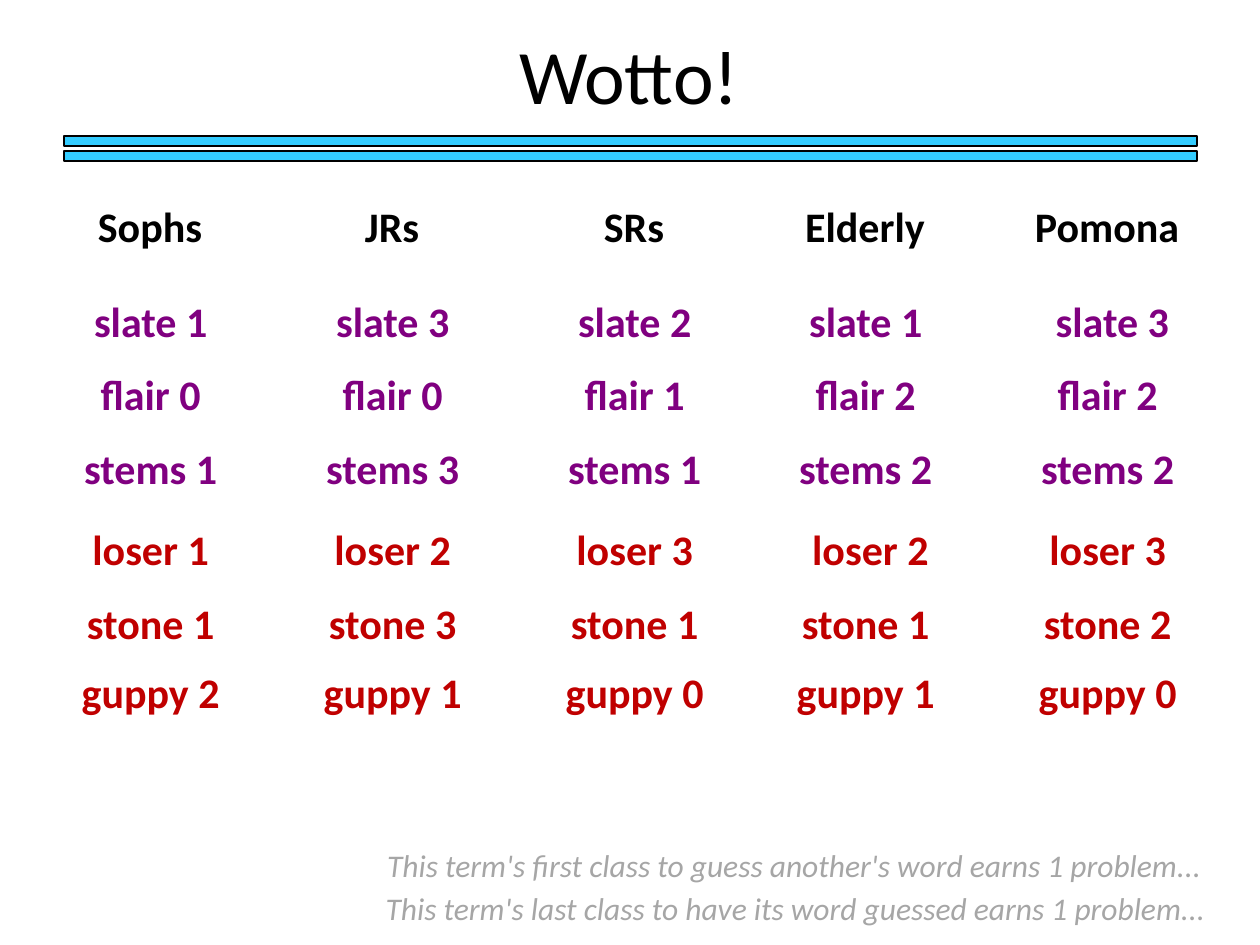
"""Build the word-guessing scoreboard slide."""
import pptx
import pptx.dml.color
import pptx.enum.shapes
import pptx.enum.text
import pptx.util

PX = 914400 / 126
BLACK = pptx.dml.color.RGBColor(0x00, 0x00, 0x00)
SKY = pptx.dml.color.RGBColor(0x33, 0xCC, 0xFF)
PURPLE = pptx.dml.color.RGBColor(0x80, 0x00, 0x80)
RED = pptx.dml.color.RGBColor(0xC0, 0x00, 0x00)
GREY = pptx.dml.color.RGBColor(0xA6, 0xA6, 0xA6)

CENTER = pptx.enum.text.PP_ALIGN.CENTER
RIGHT = pptx.enum.text.PP_ALIGN.RIGHT
TITLE_FORMAT = {"name": "Calibri", "size": pptx.util.Pt(44)}
BOARD_FORMAT = {"name": "Calibri", "size": pptx.util.Pt(24), "bold": True}
NOTE_FORMAT = {"name": "Calibri", "size": pptx.util.Pt(18), "italic": True}

CLASSES = [("Sophs", 45), ("JRs", 287), ("SRs", 529), ("Elderly", 760), ("Pomona", 1002)]
GUESSES = [
    (289, PURPLE, ["slate 1 ", "slate 3 ", "slate 2 ", "slate 1 ", "slate 3"]),
    (362, PURPLE, ["flair 0 ", "flair 0 ", "flair 1 ", "flair 2 ", "flair 2 "]),
    (436, PURPLE, ["stems 1 ", "stems 3 ", "stems 1 ", "stems 2 ", "stems 2 "]),
    (517, RED, ["loser 1 ", "loser 2 ", "loser 3 ", "loser 2", "loser 3 "]),
    (591, RED, ["stone 1 ", "stone 3 ", "stone 1 ", "stone 1 ", "stone 2 "]),
    (660, RED, ["guppy 2 ", "guppy 1 ", "guppy 0 ", "guppy 1 ", "guppy 0 "]),
]
NOTES = [
    (164, 840, "This term's first class to guess another's word earns 1 problem..."),
    (168, 883, "This term's last class to have its word guessed earns 1 problem..."),
]


def scale(*lengths):
    """Turn px lengths into EMU."""
    return [pptx.util.Emu(round(length * PX)) for length in lengths]


def add_text(slide, box, text, font_format, color, alignment=CENTER):
    """Add a one-line text box."""
    shape = slide.shapes.add_textbox(*scale(*box))
    frame = shape.text_frame
    frame.word_wrap = True
    frame.auto_size = pptx.enum.text.MSO_AUTO_SIZE.SHAPE_TO_FIT_TEXT
    paragraph = frame.paragraphs[0]
    paragraph.alignment = alignment
    run = paragraph.add_run()
    run.text = text
    for name, value in font_format.items():
        setattr(run.font, name, value)
    run.font.color.rgb = color


def add_bar(slide, top):
    """Add one bar of the double rule below the title."""
    shape = slide.shapes.add_shape(
        pptx.enum.shapes.MSO_SHAPE.RECTANGLE, *scale(64, top, 1133, 10))
    shape.shadow.inherit = False
    shape.fill.solid()
    shape.fill.fore_color.rgb = SKY
    shape.line.color.rgb = BLACK
    shape.line.width = pptx.util.Pt(0.75)


def add_board(slide):
    """Add the class names and the guesses below them."""
    for name, left in CLASSES:
        add_text(slide, (left, 194, 210, 63), name, BOARD_FORMAT, BLACK)
    for top, color, guesses in GUESSES:
        for (_, left), guess in zip(CLASSES, guesses):
            add_text(slide, (left + 21, top, 179, 63), guess, BOARD_FORMAT, color)


def main():
    """Build and save the presentation."""
    presentation = pptx.Presentation()
    presentation.slide_width, presentation.slide_height = scale(1260, 945)
    slide = presentation.slides.add_slide(presentation.slide_layouts[6])
    for top in (136, 151):
        add_bar(slide, top)
    add_text(slide, (93, 21, 1072, 105), "Wotto!", TITLE_FORMAT, BLACK)
    add_board(slide)
    for left, top, note in NOTES:
        add_text(slide, (left, top, 1050, 50), note, NOTE_FORMAT, GREY, RIGHT)
    presentation.save("out.pptx")


if __name__ == "__main__":
    main()
